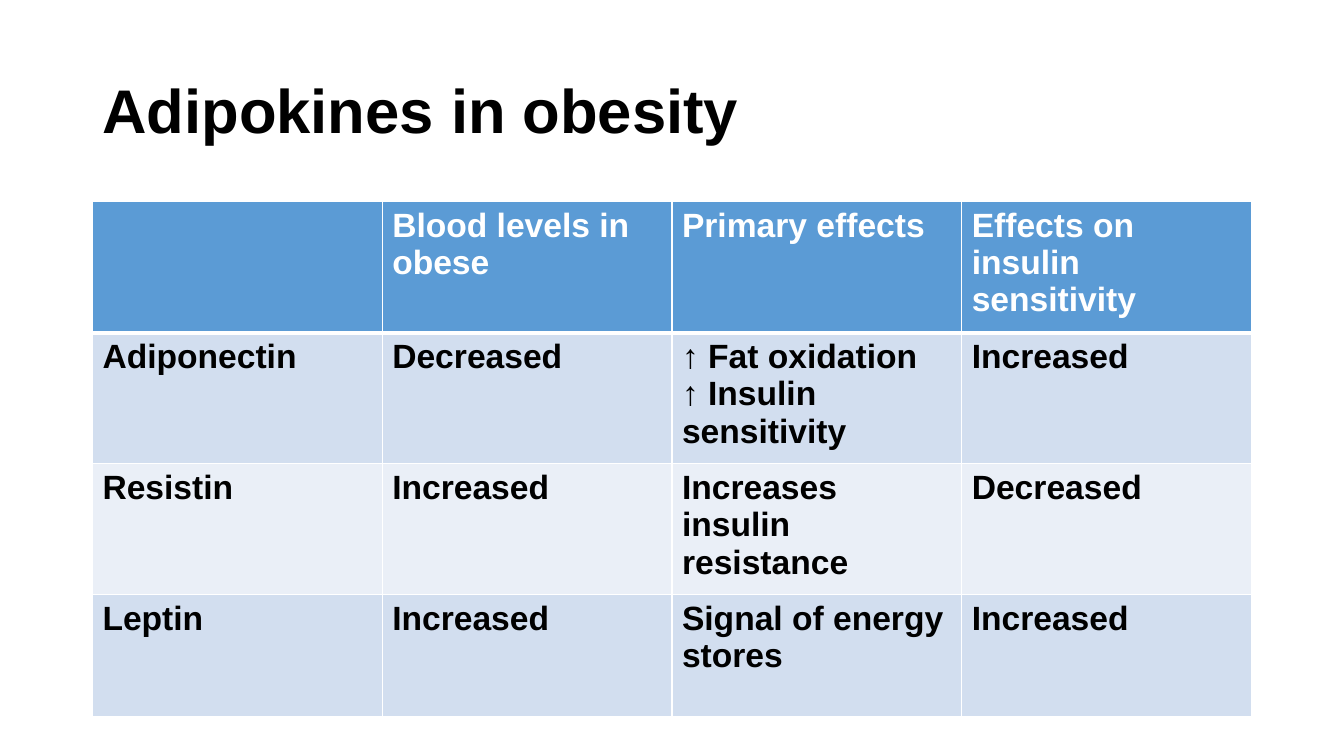
from lxml.etree import SubElement
from pptx import Presentation
from pptx.dml.color import RGBColor
from pptx.enum.text import MSO_ANCHOR
from pptx.oxml.ns import qn
from pptx.util import Cm, Pt

BLACK = RGBColor(0x00, 0x00, 0x00)
WHITE = RGBColor(0xFF, 0xFF, 0xFF)
HEADER_BLUE = RGBColor(0x5B, 0x9B, 0xD5)
BAND_DARK = RGBColor(0xD2, 0xDE, 0xEF)
BAND_LIGHT = RGBColor(0xEA, 0xEF, 0xF7)

ADIPOKINES = [
    ["", "Blood levels in obese", "Primary effects", "Effects on insulin sensitivity"],
    ["Adiponectin", "Decreased", "↑ Fat oxidation\n↑ Insulin sensitivity", "Increased"],
    ["Resistin", "Increased", "Increases insulin resistance", "Decreased"],
    ["Leptin", "Increased", "Signal of energy stores", "Increased"],
]


def format_text(text_frame, size, color):
    for paragraph in text_frame.paragraphs:
        for run in paragraph.runs:
            run.font.name = "Arial"
            run.font.size = Pt(size)
            run.font.bold = True
            run.font.color.rgb = color


def set_borders(cell, widths):
    """Draw white cell borders; widths maps a side (L, R, T, B) to points."""
    properties = cell._tc.get_or_add_tcPr()
    for side, width in widths.items():
        line = SubElement(properties, qn(f"a:ln{side}"), w=str(Pt(width)))
        fill = SubElement(line, qn("a:solidFill"))
        SubElement(fill, qn("a:srgbClr"), val=str(WHITE))


def add_title(slide, left, top, width, height):
    title = slide.shapes.add_textbox(left, top, width, height).text_frame
    title.word_wrap = True
    title.vertical_anchor = MSO_ANCHOR.MIDDLE
    title.text = "Adipokines in obesity"
    title.paragraphs[0].line_spacing = 0.9
    format_text(title, 44, BLACK)


def add_adipokine_table(slide, left, top, width, height):
    row_count, column_count = len(ADIPOKINES), len(ADIPOKINES[0])
    table = slide.shapes.add_table(
        row_count, column_count, left, top, width, height).table
    for row, texts in enumerate(ADIPOKINES):
        if row == 0:
            band, ink = HEADER_BLUE, WHITE
        else:
            band, ink = (BAND_DARK if row % 2 else BAND_LIGHT), BLACK
        borders = {"L": 1, "R": 1,
                   "T": 3 if row == 1 else 1,
                   "B": 3 if row == 0 else 1}
        for column, text in enumerate(texts):
            cell = table.cell(row, column)
            set_borders(cell, borders)
            cell.fill.solid()
            cell.fill.fore_color.rgb = band
            cell.text_frame.text = text
            format_text(cell.text_frame, 24, ink)


def main():
    presentation = Presentation()
    presentation.slide_width = Cm(33.87)
    presentation.slide_height = Cm(19.05)
    slide = presentation.slides.add_slide(presentation.slide_layouts[6])
    margin = Cm(2.33)
    content_width = presentation.slide_width - 2 * margin
    add_title(slide, margin, Cm(1.01), content_width, Cm(3.68))
    add_adipokine_table(slide, margin, Cm(5.08), content_width, Cm(12.32))
    presentation.save("out.pptx")


if __name__ == "__main__":
    main()
